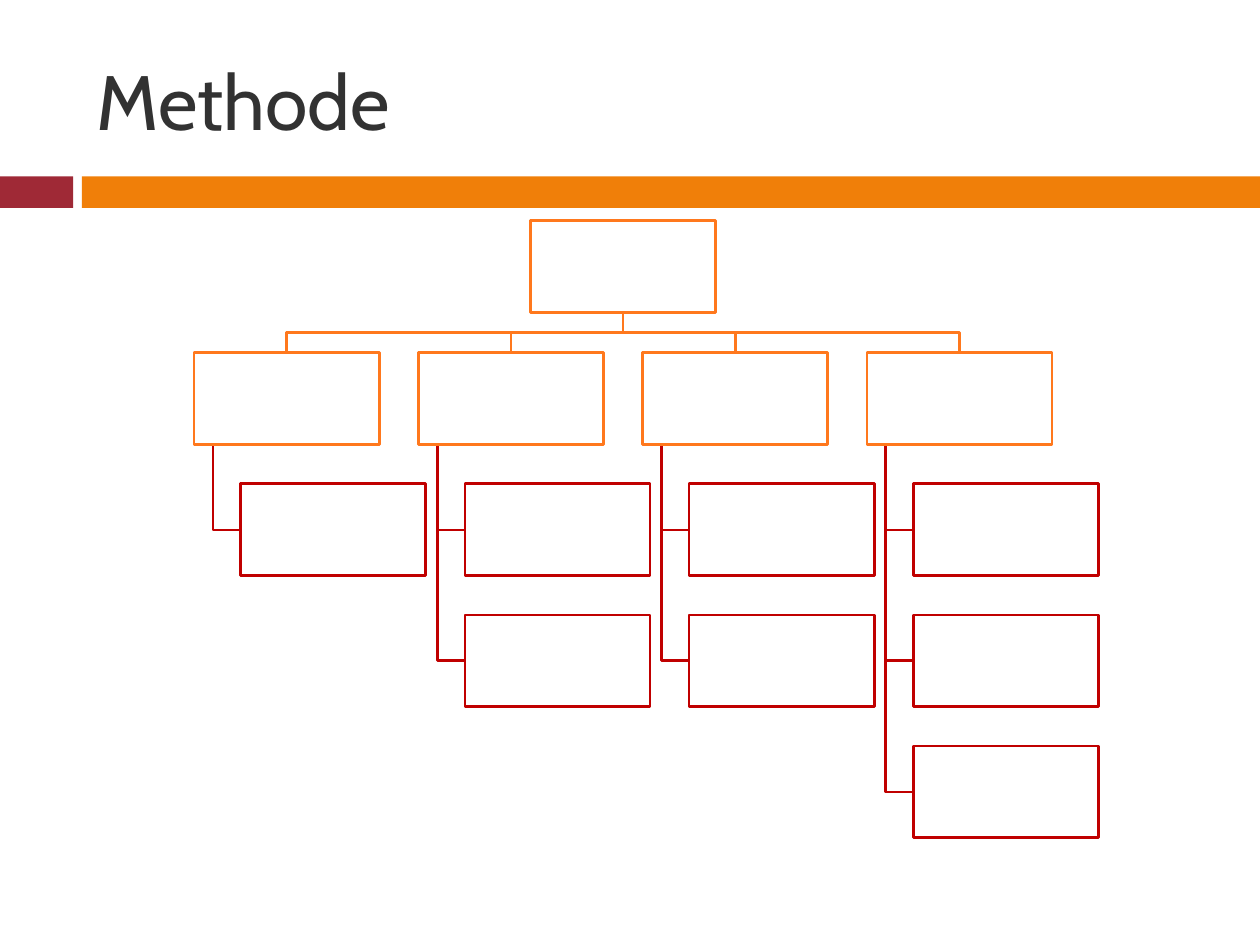
from pptx import Presentation
from pptx.dml.color import RGBColor
from pptx.enum.shapes import MSO_SHAPE
from pptx.enum.text import MSO_ANCHOR
from pptx.util import Inches, Pt

COLORS = {
    "title": "323232",
    "accent": "9F2936",
    "band": "F07F09",
    "branch": "FF781D",
    "leaf": "C00000",
    "box": "FFFFFF",
}
BOX_WIDTH, BOX_HEIGHT = 1.47, 0.73
ROOT_LEFT, ROOT_TOP = 4.21, 1.75
BRANCH_LEFT, BRANCH_TOP = 1.54, 2.8
COLUMN_PITCH, ROW_PITCH = 1.78, 1.04
LEAF_INDENT, TRUNK_INDENT = 0.37, 0.15
BUS_Y = 2.64
LEAF_COUNTS = [1, 2, 2, 3]


def color(name):
    return RGBColor.from_string(COLORS[name])


def set_line(shape, line):
    shape.line.color.rgb = color(line)
    shape.line.width = Pt(1.5)


def add_rectangle(slide, left, top, width, height, fill, line=None):
    shape = slide.shapes.add_shape(
        MSO_SHAPE.RECTANGLE, Inches(left), Inches(top), Inches(width), Inches(height)
    )
    shape.shadow.inherit = False
    shape.fill.solid()
    shape.fill.fore_color.rgb = color(fill)
    if line:
        set_line(shape, line)
    else:
        shape.line.fill.background()


def add_box(slide, left, top, line):
    add_rectangle(slide, left, top, BOX_WIDTH, BOX_HEIGHT, "box", line)


def add_elbow(slide, points, line):
    """Draw an open, unfilled line through the points, given in inches."""
    start, *rest = [(Inches(x), Inches(y)) for x, y in points]
    builder = slide.shapes.build_freeform(*start)
    builder.add_line_segments(rest, close=False)
    shape = builder.convert_to_shape()
    shape.shadow.inherit = False
    shape.fill.background()
    set_line(shape, line)


def add_text(slide, text, left, top, width, height, *, font, size, font_color):
    text_box = slide.shapes.add_textbox(
        Inches(left), Inches(top), Inches(width), Inches(height)
    )
    frame = text_box.text_frame
    frame.word_wrap = True
    frame.vertical_anchor = MSO_ANCHOR.MIDDLE
    run = frame.paragraphs[0].add_run()
    run.text = text
    run.font.name = font
    run.font.size = Pt(size)
    run.font.color.rgb = color(font_color)


def add_branch(slide, column, leaf_count):
    """Draw one second-level box with its leaves and connecting lines."""
    left = BRANCH_LEFT + column * COLUMN_PITCH
    root_x = ROOT_LEFT + BOX_WIDTH / 2
    branch_x = left + BOX_WIDTH / 2
    add_elbow(
        slide,
        [(root_x, ROOT_TOP + BOX_HEIGHT), (root_x, BUS_Y),
         (branch_x, BUS_Y), (branch_x, BRANCH_TOP)],
        "branch",
    )
    trunk_x, leaf_left = left + TRUNK_INDENT, left + LEAF_INDENT
    for row in range(1, leaf_count + 1):
        leaf_top = BRANCH_TOP + row * ROW_PITCH
        leaf_y = leaf_top + BOX_HEIGHT / 2
        add_elbow(
            slide,
            [(trunk_x, BRANCH_TOP + BOX_HEIGHT), (trunk_x, leaf_y), (leaf_left, leaf_y)],
            "leaf",
        )
        add_box(slide, leaf_left, leaf_top, "leaf")
    add_box(slide, left, BRANCH_TOP, "branch")


def main():
    presentation = Presentation()
    presentation.slide_width = Inches(10)
    presentation.slide_height = Inches(7.5)
    slide = presentation.slides.add_slide(presentation.slide_layouts[6])

    add_rectangle(slide, 0, 1.4, 0.58, 0.25, "accent")
    add_rectangle(slide, 0.65, 1.4, 9.35, 0.25, "band")
    add_text(slide, "Methode", 0.67, 0.25, 8.92, 1.08,
             font="Cabin", size=44, font_color="title")
    for column, leaf_count in enumerate(LEAF_COUNTS):
        add_branch(slide, column, leaf_count)
    add_box(slide, ROOT_LEFT, ROOT_TOP, "branch")

    presentation.save("out.pptx")


if __name__ == "__main__":
    main()
